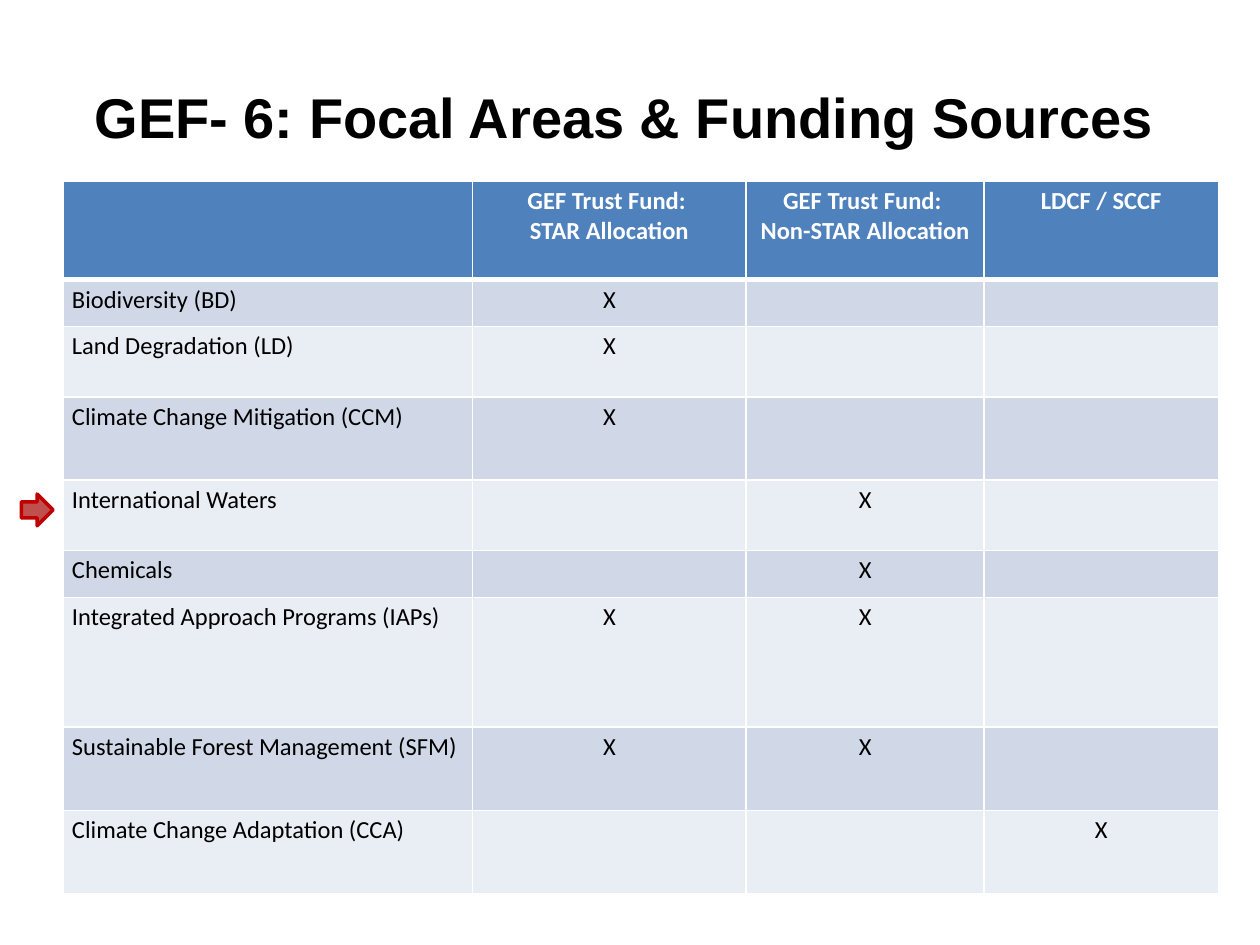
from lxml import etree
from pptx import Presentation
from pptx import util as u
from pptx.dml.color import RGBColor
from pptx.enum import shapes, text
from pptx.oxml.ns import qn

BLACK = RGBColor(0x00, 0x00, 0x00)
WHITE = RGBColor(0xFF, 0xFF, 0xFF)
HEADER_BLUE = RGBColor(0x4F, 0x81, 0xBD)
BAND_DARK = RGBColor(0xD0, 0xD8, 0xE8)
BAND_LIGHT = RGBColor(0xE9, 0xED, 0xF4)
ARROW_FILL = RGBColor(0xC0, 0x50, 0x4D)
ARROW_LINE = RGBColor(0xC0, 0x00, 0x00)

HEADERS = ["", "GEF Trust Fund: \nSTAR Allocation",
           "GEF Trust Fund: \nNon-STAR Allocation", "LDCF / SCCF"]
# Focal area, row height in cm, columns marked with an X
FOCAL_AREAS = [
    ("Biodiversity (BD)", 0.94, {1}),
    ("Land Degradation (LD)", 1.42, {1}),
    ("Climate Change Mitigation (CCM)", 1.68, {1}),
    ("International Waters", 1.42, {2}),
    ("Chemicals", 0.94, {2}),
    ("Integrated Approach Programs (IAPs)", 2.62, {1, 2}),
    ("Sustainable Forest Management (SFM)", 1.68, {1, 2}),
    ("Climate Change Adaptation (CCA)", 1.68, {3}),
]
HEADER_HEIGHT = 1.98
COLUMN_WIDTHS = [8.26, 5.51, 4.8, 4.72]


class SlideBuilder:
    title_font = {"name": "Arial", "size": u.Pt(32), "bold": True}
    cell_font = {"name": "Calibri", "size": u.Pt(14)}
    cell_format = {"margin_left": u.Cm(0.18), "margin_right": u.Cm(0.18),
                   "margin_top": u.Cm(0.1), "margin_bottom": u.Cm(0.1)}

    def __init__(self, s):
        self.s = s

    def set_text(self, tf, content, font, color, align):
        tf.text = content
        for p in tf.paragraphs:
            p.alignment = align
            for r in p.runs:
                for name, value in font.items():
                    setattr(r.font, name, value)
                r.font.color.rgb = color
            if not p.runs:
                # Keep empty cells from stretching their row
                end = etree.SubElement(p._p, qn("a:endParaRPr"))
                end.set("sz", str(int(font["size"].pt * 100)))

    def title(self, content, left, top, width, height):
        sp = self.s.shapes.add_textbox(*map(u.Cm, (left, top, width, height)))
        tf = sp.text_frame
        tf.word_wrap = True
        tf.vertical_anchor = text.MSO_ANCHOR.MIDDLE
        self.set_text(tf, content, self.title_font, BLACK, text.PP_ALIGN.CENTER)

    def borders(self, cell, widths):
        tc_pr = cell._tc.get_or_add_tcPr()
        for side, points in widths.items():
            ln = etree.SubElement(tc_pr, qn(f"a:ln{side}"), w=str(u.Pt(points)))
            fill = etree.SubElement(ln, qn("a:solidFill"))
            etree.SubElement(fill, qn("a:srgbClr"), val=str(WHITE))

    def table(self, rows, heights, widths, left, top):
        size = (left, top, sum(widths), sum(heights))
        frame = self.s.shapes.add_table(len(rows), len(widths), *map(u.Cm, size))
        table = frame.table
        for column, width in zip(table.columns, widths):
            column.width = u.Cm(width)
        for i, (row, height) in enumerate(zip(rows, heights)):
            table.rows[i].height = u.Cm(height)
            header = i == 0
            band = HEADER_BLUE if header else (BAND_LIGHT, BAND_DARK)[i % 2]
            for j, content in enumerate(row):
                cell = table.cell(i, j)
                for name, value in self.cell_format.items():
                    setattr(cell, name, value)
                self.borders(cell, {"L": 1, "R": 1, "T": 3 if i == 1 else 1,
                                    "B": 3 if header else 1})
                cell.fill.solid()
                cell.fill.fore_color.rgb = band
                centred = header or j > 0
                self.set_text(cell.text_frame, content,
                              {**self.cell_font, "bold": header},
                              WHITE if header else BLACK,
                              text.PP_ALIGN.CENTER if centred else text.PP_ALIGN.LEFT)

    def arrow(self, left, top, size):
        sp = self.s.shapes.add_shape(shapes.MSO_SHAPE.RIGHT_ARROW,
                                     *map(u.Cm, (left, top, size, size)))
        sp.shadow.inherit = False
        sp.fill.solid()
        sp.fill.fore_color.rgb = ARROW_FILL
        sp.line.color.rgb = ARROW_LINE
        sp.line.width = u.Pt(2)


def main():
    prs = Presentation()
    prs.slide_width, prs.slide_height = u.Cm(25.4), u.Cm(19.05)
    slide = SlideBuilder(prs.slides.add_slide(prs.slide_layouts[6]))

    # Title
    slide.title("GEF- 6: Focal Areas & Funding Sources", 0.43, 1.07, 24.33, 2.54)

    # Funding table
    rows = [HEADERS] + [
        [area] + ["X" if j in marked else "" for j in range(1, len(HEADERS))]
        for area, _, marked in FOCAL_AREAS]
    heights = [HEADER_HEIGHT] + [height for _, height, _ in FOCAL_AREAS]
    slide.table(rows, heights, COLUMN_WIDTHS, 1.27, 3.66)

    # Pointer to International Waters
    slide.arrow(0.43, 9.96, 0.64)

    prs.save("out.pptx")


if __name__ == "__main__":
    main()
